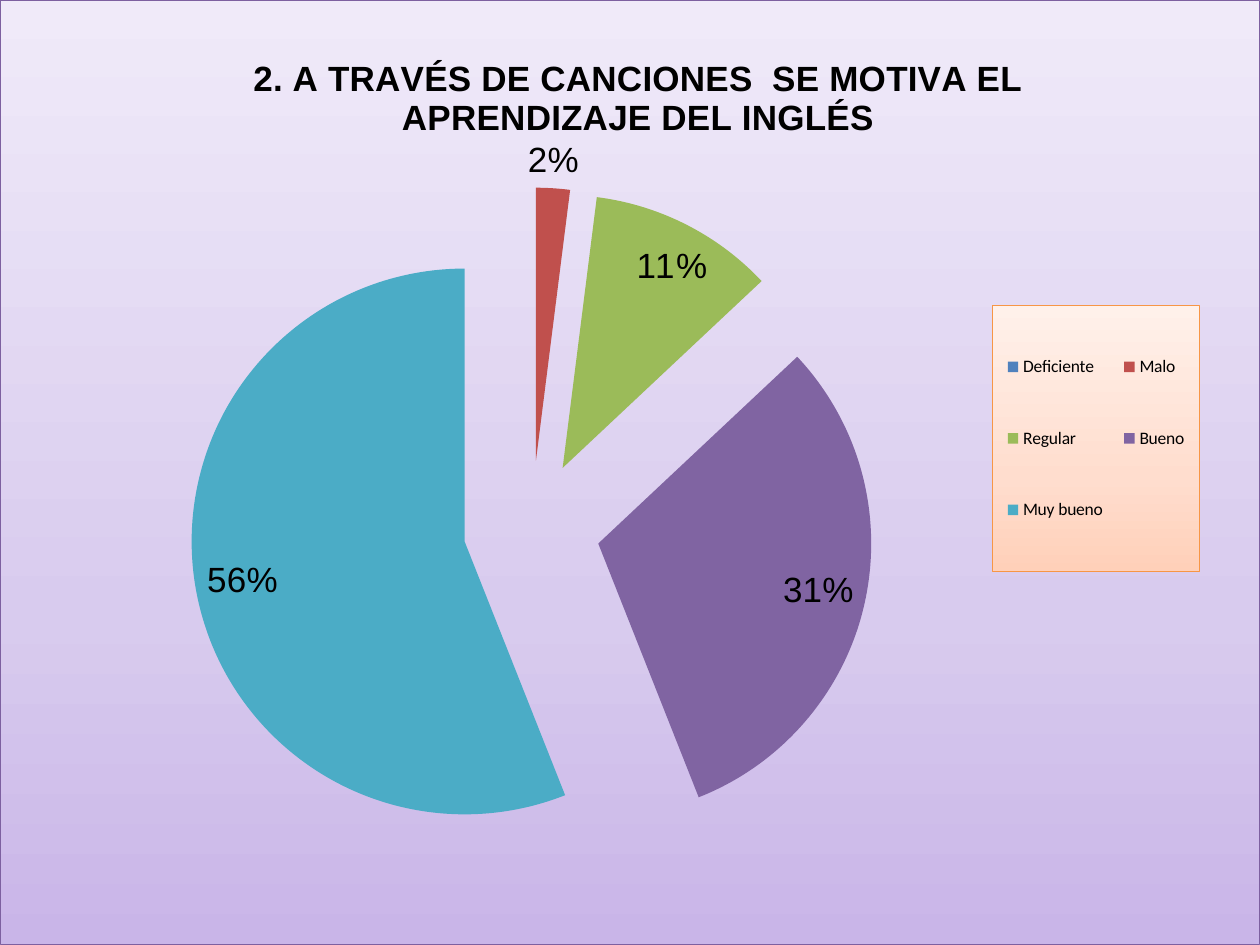
"""Build a slide with an exploded pie chart of survey answers."""
import pptx
import pptx.chart.data
import pptx.dml.color
import pptx.enum.chart
import pptx.oxml
import pptx.oxml.ns
import pptx.util

WIDTH, HEIGHT = pptx.util.Pt(720), pptx.util.Pt(540)
COLORS = {
    "text": "000000",
    "border": "7D60A0",
    "legend_border": "F79646",
    "Deficiente": "4F81BD",
    "Malo": "C0504D",
    "Regular": "9BBB59",
    "Bueno": "8064A2",
    "Muy bueno": "4BACC6",
}
BACKGROUND_STOPS = {0: "C9B5E8", 35: "D8CBEE", 100: "F0EAF9"}
LEGEND_STOPS = {0: "FFD0B9", 35: "FFDDCE", 100: "FFF1EA"}
ANSWERS = {"Deficiente": 0, "Malo": 2, "Regular": 11, "Bueno": 31, "Muy bueno": 56}
LABEL_OFFSETS = {"Malo": (0, 0), "Regular": (14, 9), "Bueno": (-2, 5), "Muy bueno": (2, 5.5)}
TITLE = "2. A TRAVÉS DE CANCIONES  SE MOTIVA EL APRENDIZAJE DEL INGLÉS"


def chart_element(tag, content):
    namespaces = pptx.oxml.ns.nsdecls("c", "a")
    return pptx.oxml.parse_xml(f"<c:{tag} {namespaces}>{content}</c:{tag}>")


def set_layout(parent, predecessor, x, y, width=None, height=None, inner=False, edge=True):
    for layout in parent.xpath("c:layout"):
        parent.remove(layout)
    content = '<c:layoutTarget val="inner"/>' if inner else ""
    if edge:
        content += '<c:xMode val="edge"/><c:yMode val="edge"/>'
    lengths = {"x": (x, WIDTH), "y": (y, HEIGHT), "w": (width, WIDTH), "h": (height, HEIGHT)}
    for tag, (length, total) in lengths.items():
        if length is not None:
            content += f'<c:{tag} val="{pptx.util.Pt(length) / total:.5f}"/>'
    layout = chart_element("layout", f"<c:manualLayout>{content}</c:manualLayout>")
    if predecessor:
        parent.xpath(predecessor)[0].addnext(layout)
    else:
        parent.insert(0, layout)


def gradient_box(stops, border):
    stop_list = "".join(
        f'<a:gs pos="{position * 1000}"><a:srgbClr val="{color}"/></a:gs>'
        for position, color in stops.items()
    )
    return chart_element(
        "spPr",
        f'<a:gradFill><a:gsLst>{stop_list}</a:gsLst><a:lin ang="16200000" scaled="1"/></a:gradFill>'
        f'<a:ln w="{pptx.util.Pt(0.75)}"><a:solidFill><a:srgbClr val="{border}"/></a:solidFill></a:ln>',
    )


def format_font(font, name="Calibri", size=10, bold=False):
    font.name = name
    font.size = pptx.util.Pt(size)
    font.bold = bold
    font.color.rgb = pptx.dml.color.RGBColor.from_string(COLORS["text"])


def write_text(text_frame, text, **font_format):
    text_frame.text = text
    format_font(text_frame.paragraphs[0].runs[0].font, **font_format)


def add_pie(slide):
    data = pptx.chart.data.CategoryChartData()
    data.categories = list(ANSWERS)
    data.add_series("Series 1", list(ANSWERS.values()))
    frame = slide.shapes.add_chart(
        pptx.enum.chart.XL_CHART_TYPE.PIE, pptx.util.Pt(0), pptx.util.Pt(0), WIDTH, HEIGHT, data
    )
    chart = frame.chart
    format_font(chart.font)
    chart.element.xpath("c:chart")[0].addnext(gradient_box(BACKGROUND_STOPS, COLORS["border"]))
    set_layout(chart.element.xpath("c:chart/c:plotArea")[0], None, 51.8, 107, 504, 390.4, inner=True)
    return chart


def add_title(chart):
    write_text(chart.chart_title.text_frame, TITLE, name="Arial", size=20, bold=True)
    set_layout(chart.element.xpath("c:chart/c:title")[0], "c:tx", 141, 27.8)


def add_legend(chart):
    chart.has_legend = True
    legend = chart.legend
    legend.position = pptx.enum.chart.XL_LEGEND_POSITION.RIGHT
    legend.include_in_layout = False
    format_font(legend.font)
    element = chart.element.xpath("c:chart/c:legend")[0]
    set_layout(element, "c:legendPos", 567.2, 174.4, 118.8, 152.3)
    element.xpath("c:overlay")[0].addnext(gradient_box(LEGEND_STOPS, COLORS["legend_border"]))


def color_slices(chart):
    plot = chart.plots[0]
    plot.vary_by_categories = True
    series = plot.series[0]
    explosion = chart_element("explosion", "")
    explosion.set("val", "25")
    chart.element.xpath(".//c:ser/c:tx")[0].addnext(explosion)
    for index, category in enumerate(ANSWERS):
        fill = series.points[index].format.fill
        fill.solid()
        fill.fore_color.rgb = pptx.dml.color.RGBColor.from_string(COLORS[category])


def label_slices(chart):
    positions = pptx.enum.chart.XL_LABEL_POSITION
    series = chart.plots[0].series[0]
    labels = series.data_labels
    labels.show_percentage = True
    labels.show_value = False
    labels.number_format = "0%"
    labels.number_format_is_linked = False
    labels.position = positions.INSIDE_END
    format_font(labels.font, name="Arial", size=20)
    group = chart.element.xpath(".//c:ser/c:dLbls")[0]
    for index, category in enumerate(ANSWERS):
        if category not in LABEL_OFFSETS:
            group.insert(0, chart_element("dLbl", f'<c:idx val="{index}"/><c:delete val="1"/>'))
            continue
        label = series.points[index].data_label
        format_font(label.font, name="Arial", size=20)
        label.position = positions.OUTSIDE_END if category == "Malo" else positions.INSIDE_END
        element = group.xpath(f"c:dLbl[c:idx/@val='{index}']")[0]
        element.xpath("c:showVal")[0].set("val", "0")
        element.xpath("c:showPercent")[0].set("val", "1")
        if any(LABEL_OFFSETS[category]):
            set_layout(element, "c:idx", *LABEL_OFFSETS[category], edge=False)


def main():
    presentation = pptx.Presentation()
    presentation.slide_width = WIDTH
    presentation.slide_height = HEIGHT
    slide = presentation.slides.add_slide(presentation.slide_layouts[6])
    chart = add_pie(slide)
    add_title(chart)
    add_legend(chart)
    color_slices(chart)
    label_slices(chart)
    presentation.save("out.pptx")


if __name__ == "__main__":
    main()
